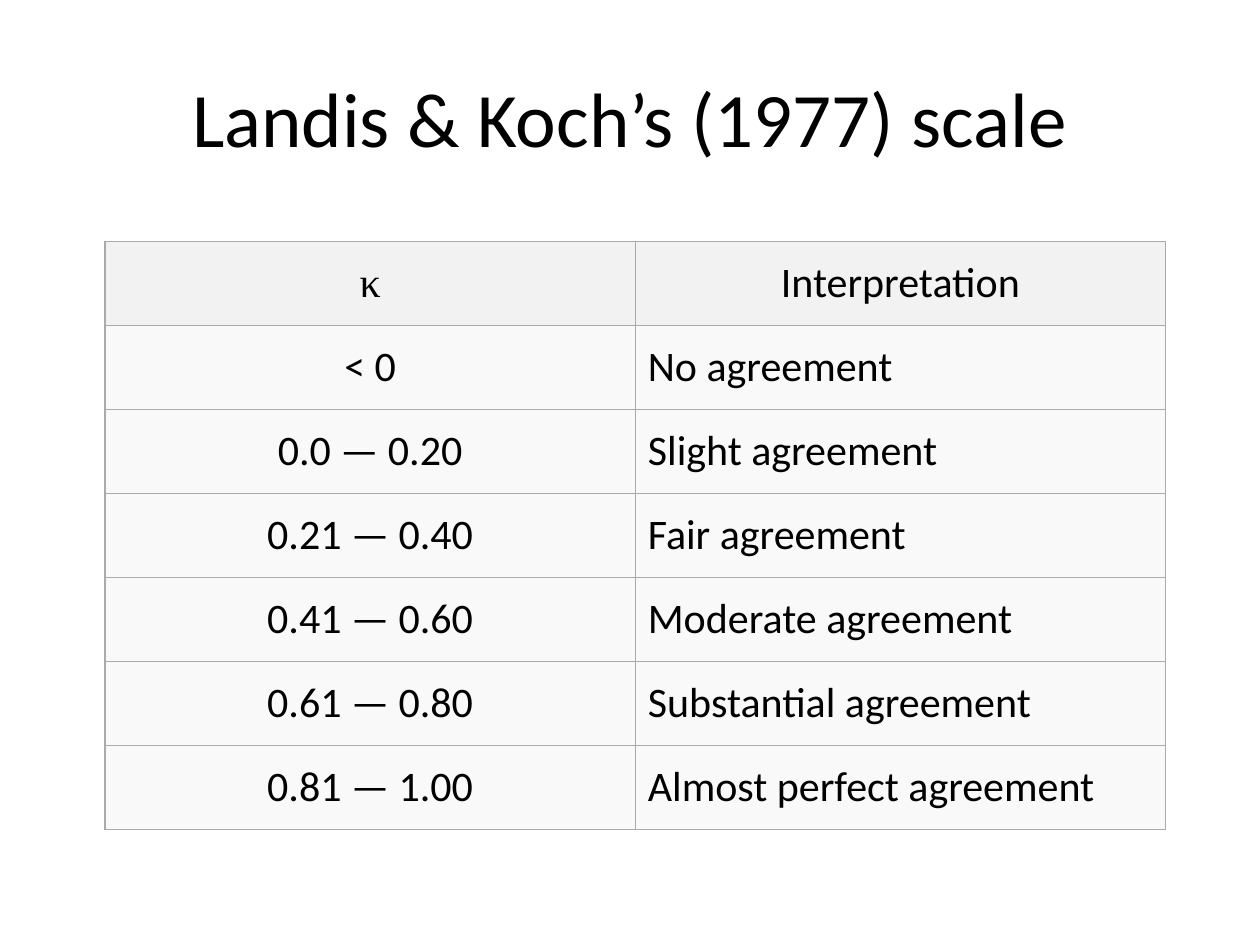
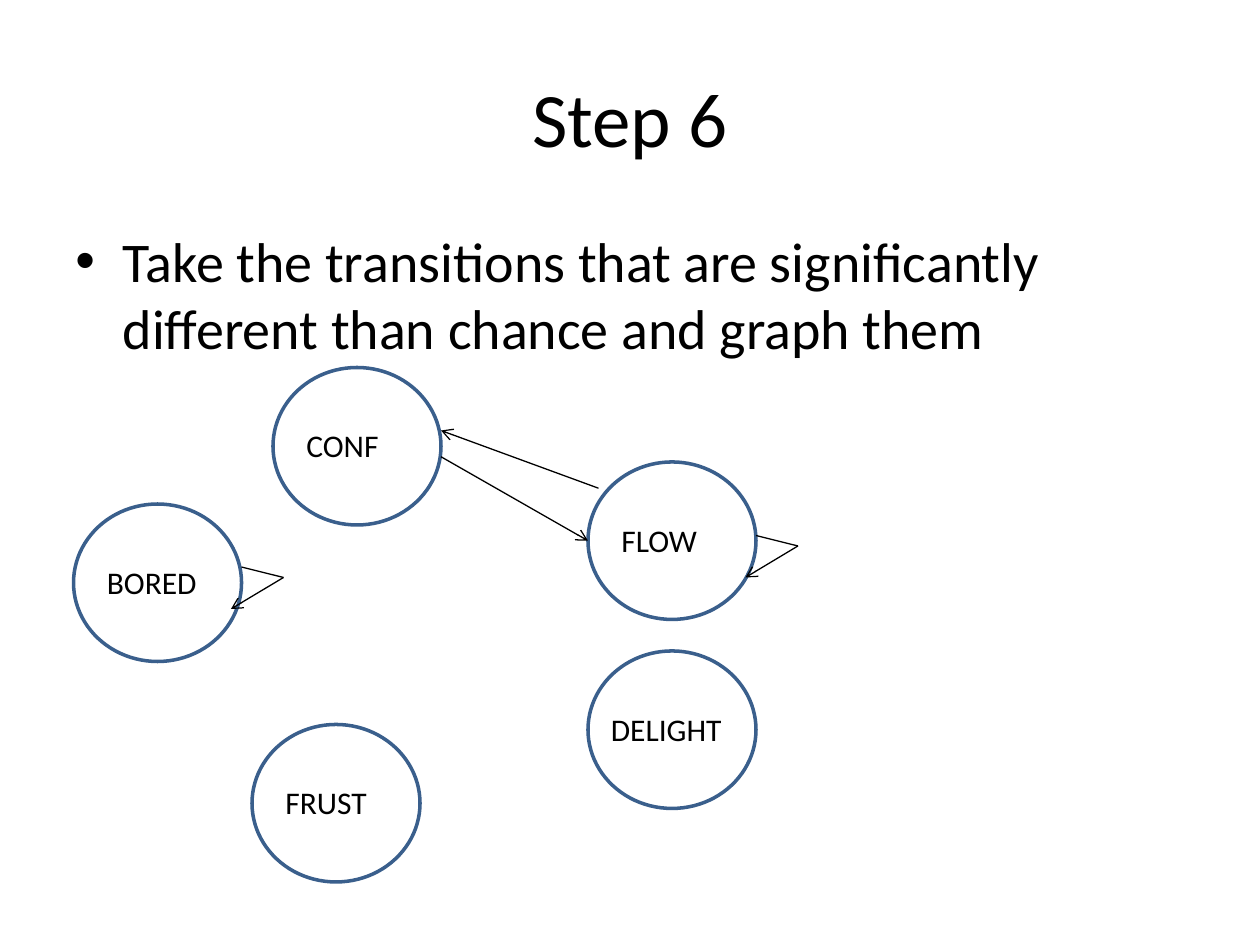
"""Build two slides: an agreement scale table and a state transition graph."""
from lxml.etree import SubElement
from pptx import Presentation
from pptx.dml.color import RGBColor
from pptx.enum.shapes import MSO_CONNECTOR, MSO_SHAPE
from pptx.enum.text import MSO_ANCHOR, MSO_AUTO_SIZE, PP_ALIGN
from pptx.oxml import parse_xml
from pptx.oxml.ns import nsdecls, qn
from pptx.util import Pt

PX = 9525
BLACK = RGBColor(0, 0, 0)
BLUE = RGBColor(0x3A, 0x5F, 0x8C)
HEAD = RGBColor(0xF2, 0xF2, 0xF2)
PALE = RGBColor(0xF9, 0xF9, 0xF9)
GRID = RGBColor(0xAA, 0xAA, 0xAA)
LEFT, MID = PP_ALIGN.LEFT, PP_ALIGN.CENTER


def write(frame, text, size, align=LEFT, face="Calibri"):
    para = frame.paragraphs[0]
    para.alignment = align
    run = para.add_run()
    run.text = text
    for key, value in {"name": face, "size": Pt(size)}.items():
        setattr(run.font, key, value)
    run.font.color.rgb = BLACK
    return para


def add_text(shapes, box, text, size, align=LEFT, **form):
    frame = shapes.add_textbox(*[n * PX for n in box]).text_frame
    for key, value in {"word_wrap": True, **form}.items():
        setattr(frame, key, value)
    return write(frame, text, size, align)


deck = Presentation()
deck.slide_width, deck.slide_height = 960 * PX, 720 * PX
blank = deck.slide_layouts[6]
pages = []
for title, left, width in [("Landis & Koch’s (1977) scale", 0, 960), ("Step 6", 48, 864)]:
    page = deck.slides.add_slide(blank).shapes
    add_text(page, (left, 29, width, 120), title, 44, MID,
             vertical_anchor=MSO_ANCHOR.MIDDLE)
    pages.append(page)
scale, graph = pages

rows = [
    ("κ", "Interpretation"),
    ("< 0", "No agreement"),
    ("0.0 — 0.20", "Slight agreement"),
    ("0.21 — 0.40", "Fair agreement"),
    ("0.41 — 0.60", "Moderate agreement"),
    ("0.61 — 0.80", "Substantial agreement"),
    ("0.81 — 1.00", "Almost perfect agreement"),
]
table = scale.add_table(len(rows), 2, 80 * PX, 184 * PX, 808 * PX,
                        64 * len(rows) * PX).table
for key in ("first_row", "horz_banding"):
    setattr(table, key, False)
for r, row in enumerate(rows):
    for c, text in enumerate(row):
        cell = table.cell(r, c)
        cell.vertical_anchor = MSO_ANCHOR.MIDDLE
        for side in ("lnL", "lnR", "lnT", "lnB"):
            cell._tc.get_or_add_tcPr().append(parse_xml(
                f'<a:{side} w="{Pt(0.75)}" {nsdecls("a")}><a:solidFill>'
                f'<a:srgbClr val="{GRID}"/></a:solidFill></a:{side}>'))
        cell.fill.solid()
        cell.fill.fore_color.rgb = PALE if r else HEAD
        write(cell.text_frame, text, 24, LEFT if r and c else MID,
              "Times New Roman" if text == "κ" else "Calibri")

point = add_text(graph, (48, 168, 864, 475),
                 "Take the transitions that are significantly different than chance and graph them", 32)
point.space_before = Pt(6.4)
props = point._p.get_or_add_pPr()
for key, value in {"marL": 36 * PX, "indent": -36 * PX}.items():
    props.set(key, str(value))
SubElement(props, qn("a:buFont"), typeface="Arial")
SubElement(props, qn("a:buChar"), char="•")

states = [
    ("BORED", 56, 384, 16, 96),
    ("FRUST", 192, 552, 16, 96),
    ("CONF", 208, 280, 16, 96),
    ("FLOW", 448, 352, 16, 96),
    ("DELIGHT", 448, 496, 8, 104),
]
for name, x, y, inset, width in states:
    group = graph.add_group_shape().shapes
    ring = group.add_shape(MSO_SHAPE.OVAL, x * PX, y * PX, 128 * PX, 120 * PX)
    ring.shadow.inherit = False
    ring.fill.background()
    ring.line.color.rgb = BLUE
    ring.line.width = Pt(2)
    add_text(group, (x + inset, y + 40, width, 38), name, 18,
             auto_size=MSO_AUTO_SIZE.SHAPE_TO_FIT_TEXT)

links = [((456, 372, 336, 328), True), ((336, 348, 448, 412), True)]
for x, y in [(184, 432), (576, 408)]:
    links += [((x + 32, y + 8, x - 8, y + 32), True), ((x, y, x + 32, y + 8), False)]
for ends, tip in links:
    link = graph.add_connector(MSO_CONNECTOR.STRAIGHT, *[n * PX for n in ends])
    link.line.color.rgb = BLACK
    link.line.width = Pt(0.75)
    if tip:
        SubElement(link.line._get_or_add_ln(), qn("a:tailEnd"), type="arrow")
    SubElement(link._element.spPr, qn("a:effectLst"))

deck.save("out.pptx")
